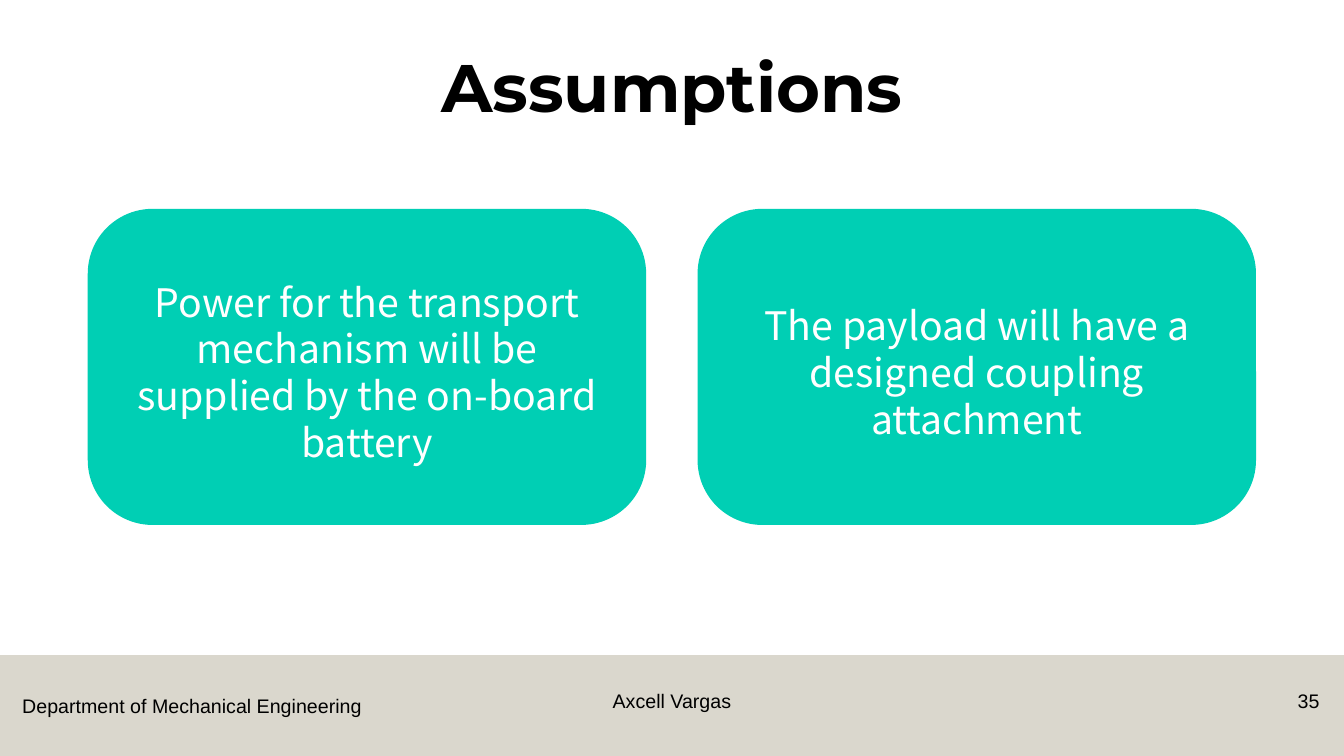
from lxml.etree import SubElement
from pptx import Presentation
from pptx.dml.color import RGBColor
from pptx.enum.shapes import MSO_SHAPE
from pptx.enum.text import MSO_ANCHOR, PP_ALIGN
from pptx.oxml.ns import qn
from pptx.util import Pt

BLACK = RGBColor(0x00, 0x00, 0x00)
WHITE = RGBColor(0xFF, 0xFF, 0xFF)
TEAL = RGBColor(0x00, 0xCF, 0xB4)
STONE = RGBColor(0xB7, 0xB0, 0x9C)

PAGE_WIDTH, PAGE_HEIGHT = 960, 540
CARD_LEFT, CARD_TOP, CARD_WIDTH, CARD_HEIGHT = 62.7, 149.2, 398.9, 225.8
CARD_STEP = 435.6
ASSUMPTIONS = [
    "Power for the transport mechanism will be supplied by the on-board battery",
    "The payload will have a designed coupling attachment",
]
FOOTER = [
    ("Department of Mechanical Engineering", 8.8, 491.8, 258.5, PP_ALIGN.LEFT),
    ("Axcell Vargas", 318, 488.9, 324, PP_ALIGN.CENTER),
    ("35", 894.2, 488.9, 55.4, PP_ALIGN.RIGHT),
]


class SlideBuilder:
    title_font, card_font, footer_font = "Montserrat", "Noto Sans CJK JP", "Arial"

    def __init__(self, page):
        self.page = page

    def add_text(self, frame, text, font, size, color, align, bold=False, spacing=None):
        frame.word_wrap = True
        para = frame.paragraphs[0]
        para.alignment = align
        if spacing:
            para.line_spacing = spacing
        span = para.add_run()
        span.text = text
        span.font.name, span.font.size, span.font.bold = font, Pt(size), bold
        span.font.color.rgb = color

    def title(self, text, left, top, width, height):
        box = self.page.shapes.title
        box.left, box.top, box.width, box.height = map(Pt, (left, top, width, height))
        box.text_frame.vertical_anchor = MSO_ANCHOR.TOP
        self.add_text(box.text_frame, text, self.title_font, 48, BLACK,
                      PP_ALIGN.CENTER, bold=True, spacing=0.9)

    def shape(self, kind, left, top, width, height, color):
        box = self.page.shapes.add_shape(kind, *map(Pt, (left, top, width, height)))
        box.shadow.inherit = False
        box.fill.solid()
        box.fill.fore_color.rgb = color
        box.line.fill.background()
        return box

    def band(self, top, height, opacity):
        box = self.shape(MSO_SHAPE.RECTANGLE, 0, top, PAGE_WIDTH, height, STONE)
        color = box.element.spPr.find(qn("a:solidFill"))[0]
        SubElement(color, qn("a:alpha"), val=str(opacity * 1000))

    def card(self, text, left):
        box = self.shape(MSO_SHAPE.ROUNDED_RECTANGLE, left, CARD_TOP,
                         CARD_WIDTH, CARD_HEIGHT, TEAL)
        box.adjustments[0] = 0.205
        frame = box.text_frame
        frame.vertical_anchor = MSO_ANCHOR.MIDDLE
        frame.margin_top, frame.margin_bottom = Pt(10), Pt(3)
        self.add_text(frame, text, self.card_font, 28, WHITE, PP_ALIGN.CENTER,
                      spacing=Pt(33.5))

    def footer(self, text, left, top, width, align):
        box = self.page.shapes.add_textbox(*map(Pt, (left, top, width, 28)))
        self.add_text(box.text_frame, text, self.footer_font, 14, BLACK, align)


def main():
    deck = Presentation()
    deck.slide_width, deck.slide_height = Pt(PAGE_WIDTH), Pt(PAGE_HEIGHT)
    builder = SlideBuilder(deck.slides.add_slide(deck.slide_layouts[5]))
    builder.band(468, 72, opacity=50)
    for entry in FOOTER:
        builder.footer(*entry)
    builder.title("Assumptions", 66, 35.3, 828, 78.5)
    for index, assumption in enumerate(ASSUMPTIONS):
        builder.card(assumption, CARD_LEFT + index * CARD_STEP)
    deck.save("out.pptx")


if __name__ == "__main__":
    main()
